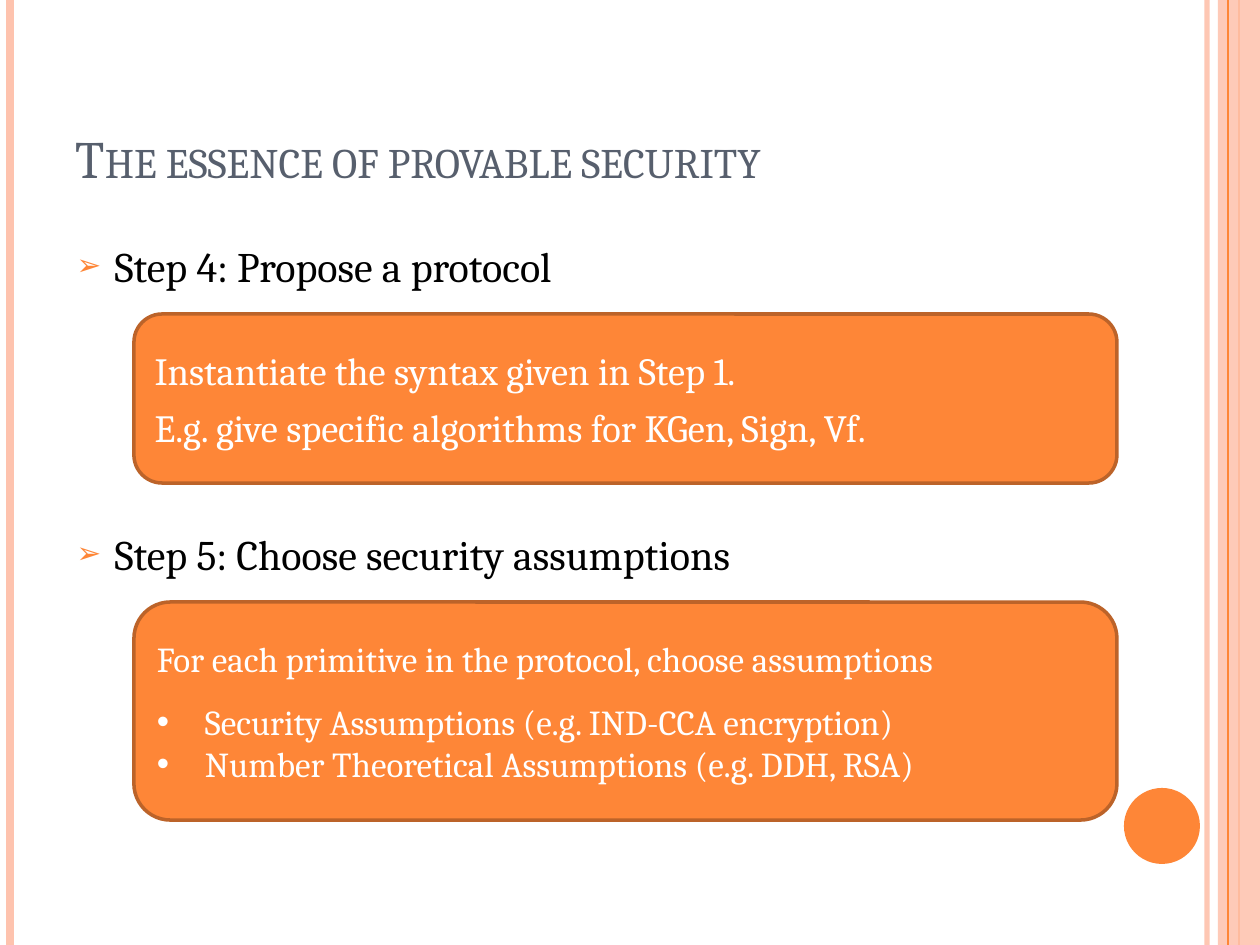
from dataclasses import dataclass
from typing import Any, Optional

import pptx
import pptx.dml.color
import pptx.enum.shapes
import pptx.enum.text
import pptx.oxml.ns
import pptx.util
from lxml import etree

EMU_PER_PX = 914400 / 126
SLIDE_WIDTH, SLIDE_HEIGHT = 1260, 945
HEADING_LEFT, HEADING_WIDTH, HEADING_HEIGHT = 64, 1029, 83
FIRST_HEADING_TOP, STEP_PITCH = 234, 288
BOX_LEFT, BOX_WIDTH, BOX_OFFSET = 134, 983, 80


@dataclass(frozen=True)
class Theme:
    font: str = "Cambria"
    accent: str = "FE8637"
    outline: str = "BC6329"
    pale: str = "FEC3AE"
    title: str = "575F6D"
    ink: str = "000000"
    light: str = "FFFFFF"
    title_size: int = 30
    heading_size: int = 24


THEME = Theme()


@dataclass(frozen=True)
class Stripe:
    x: int
    color: str
    width: float
    opacity: int = 100


@dataclass(frozen=True)
class Bullet:
    symbol: str
    indent: int
    color: Optional[str] = None
    percent: int = 100


@dataclass(frozen=True)
class Line:
    text: str
    after: int = 0
    bullet: Optional[Bullet] = None


@dataclass(frozen=True)
class Step:
    heading: str
    box_height: int
    text_size: int
    lines: tuple[Line, ...]


ARROW = Bullet("➢", 38, THEME.accent, 70)
DOT = Bullet("•", 48)

BACK_STRIPES = (
    Stripe(1207, THEME.pale, 3, 93),
    Stripe(10, THEME.pale, 4.5),
    Stripe(1239, THEME.accent, 1.5),
)
FRONT_STRIPE = Stripe(1228, THEME.accent, 0.75)

STEPS = (
    Step("Step 4: Propose a protocol", 169, 22, (
        Line("Instantiate the syntax given in Step 1.", 6),
        Line("E.g. give specific algorithms for KGen, Sign, Vf.", 6),
    )),
    Step("Step 5: Choose security assumptions", 218, 20, (
        Line("For each primitive in the protocol, choose assumptions", 12),
        Line("Security Assumptions (e.g. IND-CCA encryption)", 0, DOT),
        Line("Number Theoretical Assumptions (e.g. DDH, RSA)", 6, DOT),
    )),
)


def px(value: int) -> pptx.util.Emu:
    return pptx.util.Emu(round(value * EMU_PER_PX))


def rgb(color: str) -> pptx.dml.color.RGBColor:
    return pptx.dml.color.RGBColor.from_string(color)


def add_child(parent: Any, tag: str, **attributes: str) -> Any:
    return etree.SubElement(parent, pptx.oxml.ns.qn(tag), attributes)


def set_opacity(fill_parent: Any, percent: int) -> None:
    color = fill_parent.find(".//" + pptx.oxml.ns.qn("a:srgbClr"))
    add_child(color, "a:alpha", val=str(percent * 1000))


def place(shape: Any, left: int, top: int, width: int, height: int) -> None:
    shape.left, shape.top = px(left), px(top)
    shape.width, shape.height = px(width), px(height)


def add_run(paragraph: Any, text: str, size: int, color: str) -> Any:
    run = paragraph.add_run()
    run.text = text
    run.font.name = THEME.font
    run.font.size = pptx.util.Pt(size)
    run.font.color.rgb = rgb(color)
    return run


def set_bullet(paragraph: Any, bullet: Bullet) -> None:
    properties = paragraph._p.get_or_add_pPr()
    properties.set("marL", str(px(bullet.indent)))
    properties.set("indent", str(-px(bullet.indent)))
    if bullet.color:
        add_child(add_child(properties, "a:buClr"), "a:srgbClr", val=bullet.color)
    add_child(properties, "a:buSzPct", val=str(bullet.percent * 1000))
    add_child(properties, "a:buFont", typeface="Arial")
    add_child(properties, "a:buChar", char=bullet.symbol)


def format_frame(shape: Any, anchor: Any) -> Any:
    frame = shape.text_frame
    frame.word_wrap = True
    frame.auto_size = pptx.enum.text.MSO_AUTO_SIZE.NONE
    frame.vertical_anchor = anchor
    return frame


def draw_stripe(slide: Any, stripe: Stripe) -> None:
    connector = slide.shapes.add_connector(
        pptx.enum.shapes.MSO_CONNECTOR.STRAIGHT,
        px(stripe.x), px(0), px(stripe.x), px(SLIDE_HEIGHT))
    connector.line.color.rgb = rgb(stripe.color)
    connector.line.width = pptx.util.Pt(stripe.width)
    properties = connector._element.spPr
    if stripe.opacity < 100:
        set_opacity(properties, stripe.opacity)
    add_child(properties, "a:effectLst")


def draw_shape(slide: Any, kind: Any, left: int, top: int, width: int,
               height: int, color: str) -> Any:
    shape = slide.shapes.add_shape(kind, px(left), px(top), px(width), px(height))
    shape.shadow.inherit = False
    shape.fill.solid()
    shape.fill.fore_color.rgb = rgb(color)
    shape.line.fill.background()
    return shape


def draw_decoration(slide: Any) -> None:
    kinds = pptx.enum.shapes.MSO_SHAPE
    for stripe in BACK_STRIPES:
        draw_stripe(slide, stripe)
    band = draw_shape(slide, kinds.RECTANGLE, 1218, 0, 42, SLIDE_HEIGHT, THEME.pale)
    set_opacity(band._element.spPr, 87)
    draw_stripe(slide, FRONT_STRIPE)
    draw_shape(slide, kinds.OVAL, 1124, 788, 76, 76, THEME.accent)


def fill_title(title: Any) -> None:
    place(title, 63, 38, 1029, 157)
    frame = format_frame(title, pptx.enum.text.MSO_ANCHOR.BOTTOM)
    paragraph = frame.paragraphs[0]
    paragraph.alignment = pptx.enum.text.PP_ALIGN.LEFT
    run = add_run(paragraph, "The essence of provable security",
                  THEME.title_size, THEME.title)
    run.font._element.set("cap", "small")


def draw_step(slide: Any, placeholder: Any, step: Step, top: int) -> None:
    place(placeholder, HEADING_LEFT, top, HEADING_WIDTH, HEADING_HEIGHT)
    frame = format_frame(placeholder, pptx.enum.text.MSO_ANCHOR.TOP)
    heading = frame.paragraphs[0]
    heading.space_before = pptx.util.Pt(6)
    set_bullet(heading, ARROW)
    add_run(heading, step.heading, THEME.heading_size, THEME.ink)

    box = draw_shape(slide, pptx.enum.shapes.MSO_SHAPE.ROUNDED_RECTANGLE, BOX_LEFT,
                     top + BOX_OFFSET, BOX_WIDTH, step.box_height, THEME.accent)
    box.line.color.rgb = rgb(THEME.outline)
    box.line.width = pptx.util.Pt(2)
    frame = format_frame(box, pptx.enum.text.MSO_ANCHOR.MIDDLE)
    for index, line in enumerate(step.lines):
        paragraph = frame.add_paragraph() if index else frame.paragraphs[0]
        paragraph.alignment = pptx.enum.text.PP_ALIGN.LEFT
        paragraph.space_after = pptx.util.Pt(line.after)
        if line.bullet:
            set_bullet(paragraph, line.bullet)
        add_run(paragraph, line.text, step.text_size, THEME.light)


def main() -> None:
    presentation = pptx.Presentation()
    presentation.slide_width = px(SLIDE_WIDTH)
    presentation.slide_height = px(SLIDE_HEIGHT)
    slide = presentation.slides.add_slide(
        presentation.slide_layouts.get_by_name("Two Content"))
    draw_decoration(slide)
    title, *bodies = slide.placeholders
    fill_title(title)
    for index, (body, step) in enumerate(zip(bodies, STEPS)):
        draw_step(slide, body, step, FIRST_HEADING_TOP + index * STEP_PITCH)
    presentation.save("out.pptx")


if __name__ == "__main__":
    main()
